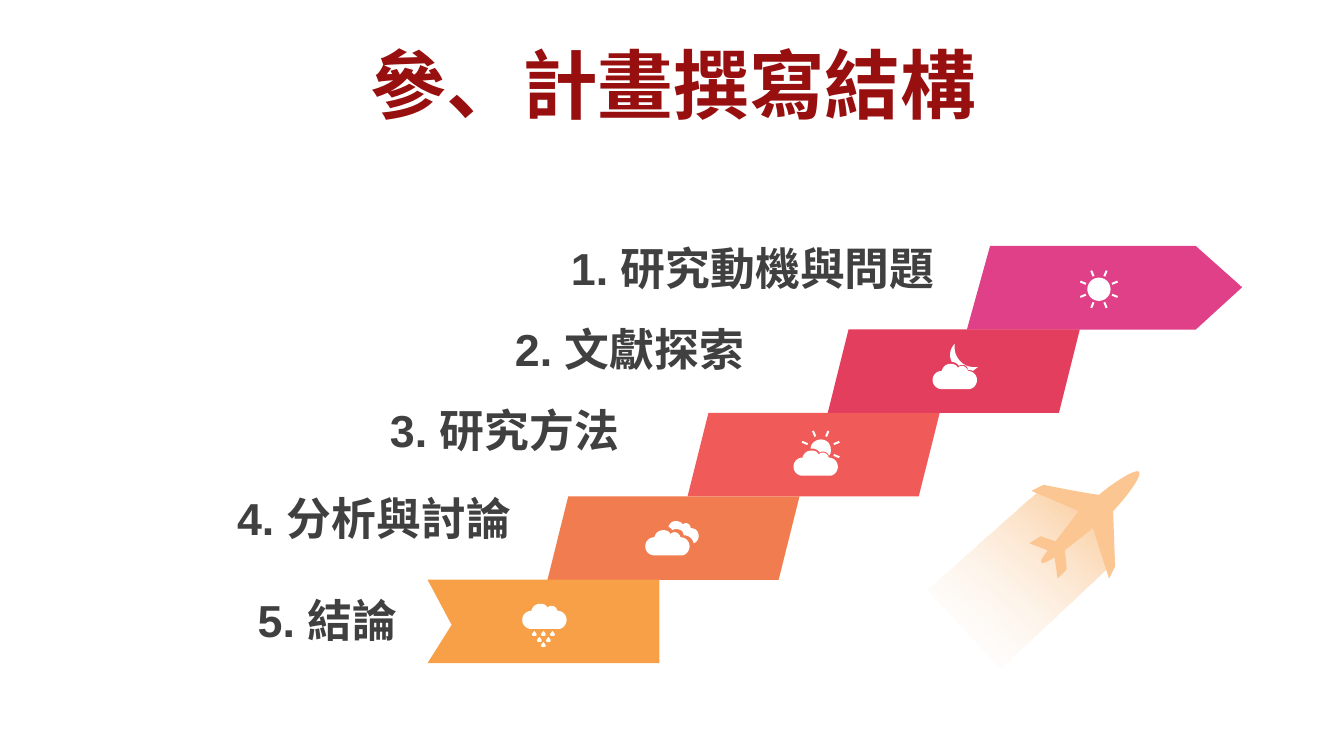
from dataclasses import dataclass
from math import cos, radians, sin

from lxml.etree import SubElement
from pptx import Presentation
from pptx.dml.color import RGBColor
from pptx.enum.shapes import MSO_SHAPE
from pptx.enum.text import MSO_ANCHOR, MSO_AUTO_SIZE, PP_ALIGN
from pptx.oxml.ns import qn
from pptx.util import Inches, Pt


@dataclass(frozen=True)
class Theme:
    font: str = "Arial"
    title_size: int = 54
    label_size: int = 32
    title: str = "970F0E"
    label: str = "404040"
    steps: tuple = ("E04088", "E43E5F", "F05A59", "F07C4F", "F8A047")
    plane: str = "FBC691"
    white: str = "FFFFFF"


theme = Theme()


def add_outline(shapes, contours, color, origin=(0, 0)):
    """Draw closed contours as one freeform; a 6-tuple is a cubic curve, a pair a corner."""
    builder = None
    for contour in contours:
        points = [contour[0]]
        for step in contour[1:]:
            if len(step) == 2:
                points.append(step)
                continue
            (x0, y0), (x1, y1, x2, y2, x3, y3) = points[-1], step
            for t in (n / 8 for n in range(1, 9)):
                u = 1 - t
                a, b, c, d = u**3, 3 * u * u * t, 3 * u * t * t, t**3
                points.append((a * x0 + b * x1 + c * x2 + d * x3,
                               a * y0 + b * y1 + c * y2 + d * y3))
        points = [(Inches(x + origin[0]), Inches(y + origin[1])) for x, y in points]
        if builder is None:
            builder = shapes.build_freeform(*points[0])
        else:
            builder.move_to(*points[0])
        builder.add_line_segments(points[1:], close=True)
    sp = builder.convert_to_shape()
    sp.shadow.inherit = False
    sp.fill.solid()
    sp.fill.fore_color.rgb = RGBColor.from_string(color)
    sp.line.fill.background()
    return sp


def add_text(s, box, text, size, color, align):
    sp = s.shapes.add_textbox(*map(Inches, box))
    tf = sp.text_frame
    tf.word_wrap = True
    p = tf.paragraphs[0]
    p.alignment = align
    r = p.add_run()
    r.text = text
    r.font.name = theme.font
    r.font.size = Pt(size)
    r.font.bold = True
    r.font.color.rgb = RGBColor.from_string(color)
    return tf


prs = Presentation()
prs.slide_width, prs.slide_height = Inches(13.33), Inches(7.5)
s = prs.slides.add_slide(prs.slide_layouts[6])

# Title
tf = add_text(s, (0.35, 0.49, 12.66, 0.79), "參、計畫撰寫結構",
              theme.title_size, theme.title, PP_ALIGN.CENTER)
tf.vertical_anchor = MSO_ANCHOR.MIDDLE
tf.paragraphs[0].line_spacing = 0.9

# Ribbon staircase: arrow head, three slanted steps, notched tail
ribbon = s.shapes.add_group_shape().shapes
STEP_TOP, STEP_HEIGHT, STEP_SHIFT = 2.44, 0.828, 1.39
add_outline(ribbon, [[(9.82, 2.44), (11.86, 2.44), (12.32, 2.85), (11.86, 3.27), (9.59, 3.27)]],
            theme.steps[0])
for i in range(1, 4):
    sp = ribbon.add_shape(MSO_SHAPE.PARALLELOGRAM, Inches(8.21 - STEP_SHIFT * (i - 1)),
                          Inches(STEP_TOP + STEP_HEIGHT * i), Inches(2.5), Inches(STEP_HEIGHT))
    sp.shadow.inherit = False
    sp.fill.solid()
    sp.fill.fore_color.rgb = RGBColor.from_string(theme.steps[i])
    sp.line.fill.background()
add_outline(ribbon, [[(4.24, 5.75), (6.54, 5.75), (6.54, 6.58), (4.24, 6.58), (4.48, 6.2)]],
            theme.steps[4])

# Step labels, right-aligned beside the ribbon
labels = [
    ("1. 研究動機與問題", 5.18, 2.34, 4.19),
    ("2. 文獻探索", 4.22, 3.14, 3.26),
    ("3. 研究方法", 2.98, 3.95, 3.26),
    ("4. 分析與討論", 1.91, 4.82, 3.26),
    ("5. 結論", 0.78, 5.83, 3.26),
]
for text, left, top, width in labels:
    tf = add_text(s, (left, top, width, 0.64), text,
                  theme.label_size, theme.label, PP_ALIGN.RIGHT)
    tf.auto_size = MSO_AUTO_SIZE.SHAPE_TO_FIT_TEXT

# Plane with its fading trail
trail = add_outline(s.shapes, [[(10.84, 5.05), (11.02, 5.6), (9.92, 6.63), (9.2, 5.85),
                                (10.28, 4.89)]], theme.plane)
trail.fill.gradient()
trail.fill.gradient_angle = 50
for stop, color in zip(trail.fill.gradient_stops, (theme.white, theme.plane)):
    stop.color.rgb = RGBColor.from_string(color)
SubElement(trail.element.find(".//" + qn("a:srgbClr")), qn("a:alpha"), val="0")

plane = [
    (10.49, 5.74), (10.46, 5.53), (10.42, 5.55, 10.35, 5.6, 10.33, 5.58),
    (10.31, 5.56, 10.37, 5.5, 10.39, 5.46), (10.21, 5.39), (10.32, 5.32), (10.47, 5.37),
    (10.7, 5.07), (10.23, 4.87), (10.35, 4.81), (10.55, 4.85, 10.7, 4.88, 10.9, 4.91),
    (11, 4.82, 11.26, 4.64, 11.3, 4.68), (11.33, 4.73, 11.14, 4.97, 11.04, 5.07),
    (11.06, 5.62), (11, 5.74), (10.84, 5.24), (10.56, 5.46), (10.57, 5.51, 10.58, 5.65, 10.58, 5.65),
]
add_outline(s.shapes, [plane], theme.plane)

# Weather icons; cloud parts are measured from the cloud's lower left corner
cloud = [
    (0.18, -0.25), (0.21, -0.25, 0.24, -0.24, 0.25, -0.21), (0.26, -0.22, 0.27, -0.23, 0.29, -0.23),
    (0.32, -0.23, 0.34, -0.21, 0.35, -0.18), (0.4, -0.18, 0.44, -0.14, 0.44, -0.09),
    (0.44, -0.04, 0.4, 0, 0.36, 0), (0.09, 0), (0.04, 0, 0, -0.04, 0, -0.09),
    (0, -0.14, 0.04, -0.18, 0.09, -0.18), (0.1, -0.22, 0.13, -0.25, 0.18, -0.25),
]
back_cloud = [
    (0.3, -0.34), (0.33, -0.34, 0.36, -0.33, 0.37, -0.31), (0.38, -0.31, 0.39, -0.32, 0.4, -0.32),
    (0.43, -0.32, 0.45, -0.3, 0.45, -0.27), (0.5, -0.27, 0.53, -0.24, 0.53, -0.19),
    (0.53, -0.16, 0.51, -0.13, 0.48, -0.12), (0.47, -0.17, 0.43, -0.2, 0.38, -0.2),
    (0.38, -0.24, 0.35, -0.26, 0.31, -0.26), (0.3, -0.26, 0.28, -0.26, 0.27, -0.25),
    (0.26, -0.26, 0.25, -0.28, 0.23, -0.28), (0.24, -0.32, 0.27, -0.34, 0.3, -0.34),
]
half_sun = [
    (0.27, -0.36), (0.33, -0.36, 0.37, -0.32, 0.37, -0.26), (0.37, -0.24, 0.37, -0.21, 0.35, -0.2),
    (0.35, -0.22, 0.32, -0.24, 0.3, -0.24), (0.28, -0.24, 0.27, -0.24, 0.26, -0.23),
    (0.25, -0.25, 0.22, -0.27, 0.19, -0.27), (0.17, -0.27), (0.17, -0.32, 0.22, -0.36, 0.27, -0.36),
]
moon = [
    (0.22, -0.45), (0.21, -0.38, 0.23, -0.32, 0.28, -0.27), (0.32, -0.23, 0.38, -0.21, 0.45, -0.22),
    (0.43, -0.2, 0.41, -0.19, 0.4, -0.18), (0.38, -0.19, 0.37, -0.19, 0.35, -0.19),
    (0.35, -0.22, 0.33, -0.24, 0.3, -0.24), (0.28, -0.24, 0.27, -0.24, 0.26, -0.23),
    (0.25, -0.25, 0.22, -0.27, 0.19, -0.27), (0.16, -0.33, 0.17, -0.4, 0.22, -0.45),
]
drops = [[(x, y), (x + 0.04, y + 0.04, x + 0.02, y + 0.05, x, y + 0.05),
          (x - 0.02, y + 0.05, x - 0.04, y + 0.04, x, y)]
         for x, y in ((0.12, 0.02), (0.21, 0.02), (0.3, 0.02),
                      (0.17, 0.08), (0.26, 0.08), (0.21, 0.13))]
rays = []
for k in range(8):
    angle = radians(22.5 + 45 * k)
    rays.append([(r * cos(angle) - w * sin(angle), r * sin(angle) + w * cos(angle))
                 for r, w in ((0.14, -0.01), (0.2, -0.01), (0.2, 0.01), (0.14, 0.01))])
disc = [(0.115 * cos(radians(a)), 0.115 * sin(radians(a))) for a in range(0, 360, 10)]
half_sun_rays = [[(x + 0.27, y - 0.26) for x, y in rays[k]] for k in (0, 4, 5, 6, 7)]

icons = [
    ([cloud, back_cloud], (6.4, 5.51)),
    ([cloud, half_sun, *half_sun_rays], (7.87, 4.72)),
    ([cloud, *drops], (5.18, 6.24)),
    ([cloud, moon], (9.25, 3.86)),
    ([disc, *rays], (10.9, 2.87)),
]
for contours, origin in icons:
    add_outline(s.shapes, contours, theme.white, origin)

prs.save("out.pptx")
